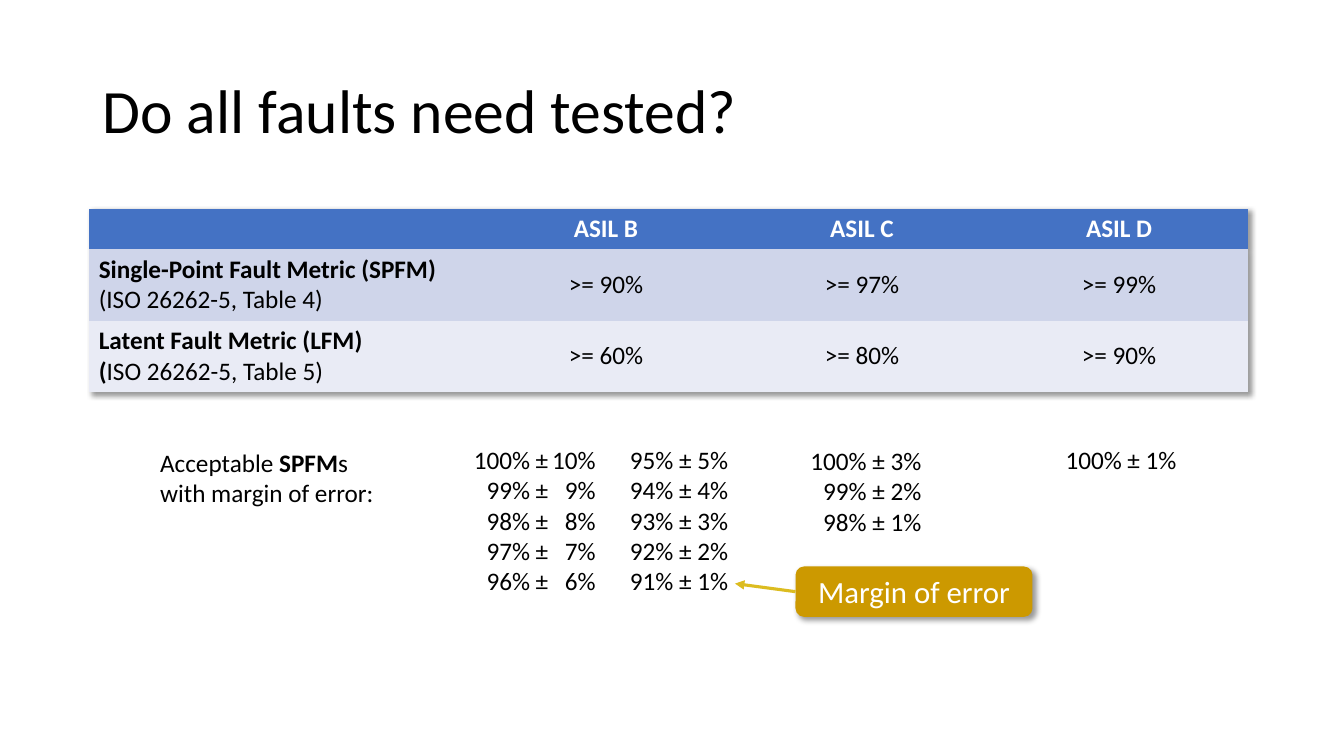
from lxml import etree
from pptx import Presentation
from pptx import util as u
from pptx.dml.color import RGBColor
from pptx.enum import shapes, text
from pptx.oxml import parse_xml
from pptx.oxml.ns import qn

BLACK = RGBColor(0, 0, 0)
WHITE = RGBColor(255, 255, 255)
BLUE = RGBColor(0x44, 0x72, 0xC4)
BANDS = [RGBColor(0xCF, 0xD5, 0xEA), RGBColor(0xE9, 0xEB, 0xF5)]
GOLD = RGBColor(0xCC, 0x99, 0x00)
YELLOW = RGBColor(0xDC, 0xBC, 0x20)
LEFT, MID, RIGHT = text.PP_ALIGN.LEFT, text.PP_ALIGN.CENTER, text.PP_ALIGN.RIGHT
SHADOW = (
    '<a:effectLst xmlns:a="http://schemas.openxmlformats.org/drawingml/2006/main">'
    '<a:outerShdw blurRad="50800" dist="38100" dir="2700000" algn="tl" rotWithShape="0">'
    '<a:srgbClr val="000000"><a:alpha val="40000"/></a:srgbClr>'
    '</a:outerShdw></a:effectLst>'
)
NO_STYLE = "{2D5ABB26-0587-4C30-8999-92F81FD0307C}"


def write(frame, lines, size=18, color=BLACK, align=LEFT, bold=False):
    frame.text = "\n".join(lines)
    for para in frame.paragraphs:
        para.alignment = align
        for run in para.runs:
            font = run.font
            font.name, font.size, font.bold = "Calibri", u.Pt(size), bold
            font.color.rgb = color


def add_box(left, top, width, height):
    frame = slide.shapes.add_textbox(
        u.Inches(left), u.Inches(top), u.Inches(width), u.Inches(height)
    ).text_frame
    frame.word_wrap = True
    return frame


deck = Presentation()
deck.slide_width, deck.slide_height = u.Inches(13.33), u.Inches(7.5)
slide = deck.slides.add_slide(deck.slide_layouts[6])

title = add_box(0.92, 0.4, 11.5, 1.45)
title.vertical_anchor = text.MSO_ANCHOR.MIDDLE
write(title, ["Do all faults need tested?"], 44)
title.paragraphs[0].line_spacing = 0.9

rows = [
    [[], ["ASIL B"], ["ASIL C"], ["ASIL D"]],
    [["Single-Point Fault Metric (SPFM)", "(ISO 26262-5, Table 4)"],
     [">= 90%"], [">= 97%"], [">= 99%"]],
    [["Latent Fault Metric (LFM)", "(ISO 26262-5, Table 5)"],
     [">= 60%"], [">= 80%"], [">= 90%"]],
]
table = slide.shapes.add_table(
    3, 4, u.Inches(0.88), u.Inches(2.07), u.Inches(11.5), u.Inches(1.81)
).table
props = table._tbl.tblPr
props.find(qn("a:tableStyleId")).text = NO_STYLE
props.insert(0, parse_xml(SHADOW))
for col, width in zip(table.columns, [3.86, 2.54, 2.54, 2.56]):
    col.width = u.Inches(width)
for row, height in zip(table.rows, [0.4, 0.71, 0.71]):
    row.height = u.Inches(height)
for r, row in enumerate(rows):
    for c, lines in enumerate(row):
        cell = table.cell(r, c)
        cell.fill.solid()
        cell.fill.fore_color.rgb = BANDS[r - 1] if r else BLUE
        if r and c:
            cell.vertical_anchor = text.MSO_ANCHOR.MIDDLE
        write(cell.text_frame, lines, color=BLACK if r else WHITE,
              align=MID if c else LEFT, bold=r == 0)
    if r:
        names = table.cell(r, 0).text_frame.paragraphs
        names[0].runs[0].font.bold = True
        if r == 2:
            tail = names[1].runs[0]
            tail.text = "("
            tail.font.bold = True
            rest = names[1].add_run()
            rest.text = "ISO 26262-5, Table 5)"
            rest.font.name, rest.font.size = "Calibri", u.Pt(18)
            rest.font.color.rgb = BLACK

pairs = add_box(4.6, 4.36, 2.72, 1.62)
body = pairs._txBody.bodyPr
body.set("numCol", "2")
wide = [f"\t{100 - n}% ±\t{10 - n}%" for n in range(5)]
slim = [f"{95 - n}% ± {5 - n}%" for n in range(5)]
write(pairs, wide + slim)
for n, para in enumerate(pairs.paragraphs):
    if n < 5:
        tabs = etree.SubElement(para._p.get_or_add_pPr(), qn("a:tabLst"))
        for stop in (0.74, 1.21):
            etree.SubElement(tabs, qn("a:tab"), pos=str(u.Inches(stop)), algn="r")
    else:
        para.alignment = RIGHT

for left, top, height, count in [(7.94, 4.37, 1.01, 3), (10.47, 4.36, 0.4, 1)]:
    frame = add_box(left, top, 1.37, height)
    frame.margin_right = u.Inches(0.17)
    write(frame, [f"{100 - n}% ± {count - n}%" for n in range(count)], align=RIGHT)

label = add_box(1.49, 4.39, 2.43, 0.71)
write(label, ["Acceptable "])
for part, bold in [("SPFM", True), ("s with margin of error:", False)]:
    run = label.paragraphs[0].add_run()
    run.text = part
    run.font.name, run.font.size, run.font.bold = "Calibri", u.Pt(18), bold
    run.font.color.rgb = BLACK

note = slide.shapes.add_shape(
    shapes.MSO_SHAPE.ROUNDED_RECTANGLE,
    u.Inches(7.89), u.Inches(5.62), u.Inches(2.35), u.Inches(0.5)
)
note.adjustments[0] = 0.17
note.fill.solid()
note.fill.fore_color.rgb = GOLD
note.line.fill.background()
note._element.spPr.append(parse_xml(SHADOW))
note.text_frame.vertical_anchor = text.MSO_ANCHOR.MIDDLE
write(note.text_frame, ["Margin of error"], 22, WHITE, MID)

arrow = slide.shapes.add_connector(
    shapes.MSO_CONNECTOR.STRAIGHT,
    u.Inches(7.89), u.Inches(5.87), u.Inches(7.29), u.Inches(5.79)
)
arrow.line.color.rgb = YELLOW
arrow.line.width = u.Pt(2.25)
etree.SubElement(arrow.line._get_or_add_ln(), qn("a:tailEnd"), type="triangle")
etree.SubElement(arrow._element.spPr, qn("a:effectLst"))

deck.save("out.pptx")
